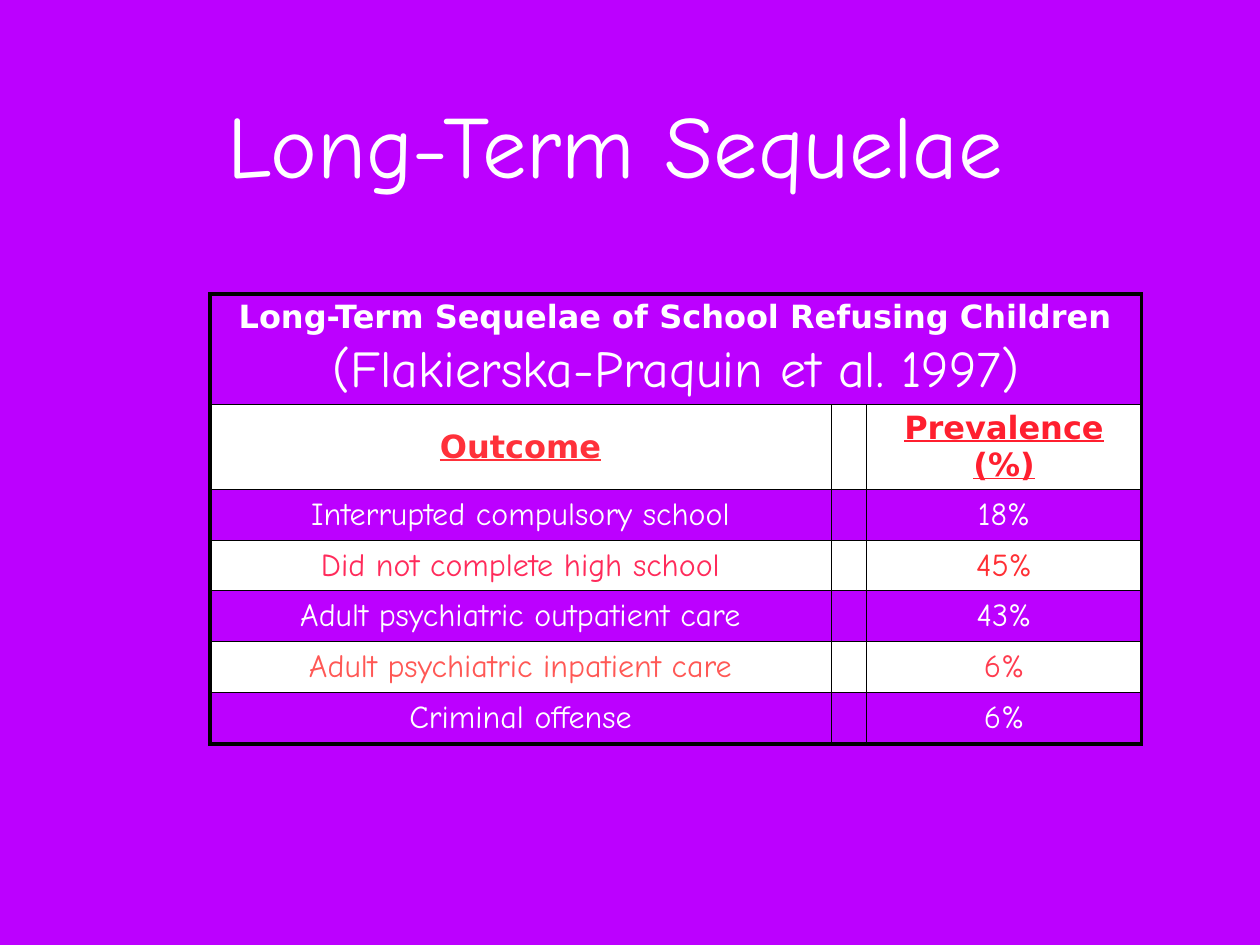
from dataclasses import dataclass

from pptx import Presentation
from pptx.dml.color import RGBColor
from pptx.enum.text import MSO_ANCHOR, MSO_AUTO_SIZE, PP_ALIGN
from pptx.oxml.ns import qn
from pptx.util import Cm, Pt
from lxml.etree import SubElement


@dataclass(frozen=True)
class Theme:
    background: str = "BC00FF"
    white: str = "FFFFFF"
    line: str = "000000"
    script_font: str = "Comic Neue"
    bold_font: str = "DejaVu Sans"
    title_size: int = 72
    citation_size: int = 42
    table_size: int = 26
    outer_line: int = 3
    inner_line: int = 1


@dataclass(frozen=True)
class Outcome:
    name: str
    prevalence: str
    name_color: str = "FFFFFF"
    prevalence_color: str = "FFFFFF"
    heading: bool = False


THEME = Theme()
OUTCOMES = [
    Outcome("Outcome", "Prevalence (%)", "FF313A", "FF1F2F", heading=True),
    Outcome("Interrupted compulsory school", "18%"),
    Outcome("Did not complete high school", "45%", "FF2B5B", "FF2F34"),
    Outcome("Adult psychiatric outpatient care", "43%"),
    Outcome("Adult psychiatric inpatient care", "6%", "FF5855", "FF3C4F"),
    Outcome("Criminal offense", "6%"),
]
COL_WIDTHS = [17.81, 1.02, 7.87]
ROW_HEIGHTS = [2.46, 2.44] + [1.45] * 4 + [1.49]


def write(p, text: str, size: int, color: str, heading: bool = False,
          underline: bool = False) -> None:
    p.text = text
    p.alignment = PP_ALIGN.CENTER
    font = p.runs[0].font
    font.name = THEME.bold_font if heading else THEME.script_font
    font.size = Pt(size)
    font.bold = heading
    font.underline = underline
    font.color.rgb = RGBColor.from_string(color)


def set_borders(cell, row: int, col: int, span: int = 1) -> None:
    """Thick lines on the table's outer edge, thin lines inside."""
    outer = {
        "a:lnL": col == 0,
        "a:lnR": col + span == len(COL_WIDTHS),
        "a:lnT": row == 0,
        "a:lnB": row + 1 == len(ROW_HEIGHTS),
    }
    tc_pr = cell._tc.get_or_add_tcPr()
    for tag, is_outer in outer.items():
        width = THEME.outer_line if is_outer else THEME.inner_line
        ln = SubElement(tc_pr, qn(tag), w=str(Pt(width)))
        fill = SubElement(ln, qn("a:solidFill"))
        SubElement(fill, qn("a:srgbClr"), val=THEME.line)


def format_cell(cell, row: int, col: int, span: int = 1) -> None:
    set_borders(cell, row, col, span)
    if row % 2:
        cell.fill.solid()
        cell.fill.fore_color.rgb = RGBColor.from_string(THEME.white)
    else:
        cell.fill.background()
    cell.vertical_anchor = MSO_ANCHOR.MIDDLE
    cell.margin_left = cell.margin_right = Cm(0.13)
    cell.margin_top = cell.margin_bottom = Cm(0.13)


def add_title(s) -> None:
    sp = s.shapes.title
    sp.left, sp.top, sp.width, sp.height = Cm(3.53), Cm(0.56), Cm(29.06), Cm(7.06)
    tf = sp.text_frame
    tf.word_wrap = True
    tf.auto_size = MSO_AUTO_SIZE.NONE
    tf.vertical_anchor = MSO_ANCHOR.MIDDLE
    tf.margin_left = tf.margin_right = tf.margin_top = tf.margin_bottom = Cm(0.15)
    write(tf.paragraphs[0], "Long-Term Sequelae ", THEME.title_size, THEME.white)


def add_outcome_table(s) -> None:
    table = s.shapes.add_table(
        len(ROW_HEIGHTS), len(COL_WIDTHS), Cm(6.02), Cm(8.43),
        Cm(sum(COL_WIDTHS)), Cm(sum(ROW_HEIGHTS))).table
    table.first_row = table.horz_banding = False
    for column, width in zip(table.columns, COL_WIDTHS):
        column.width = Cm(width)
    for row, height in zip(table.rows, ROW_HEIGHTS):
        row.height = Cm(height)

    # Caption across all columns
    caption = table.cell(0, 0)
    caption.merge(table.cell(0, len(COL_WIDTHS) - 1))
    format_cell(caption, 0, 0, len(COL_WIDTHS))
    tf = caption.text_frame
    write(tf.paragraphs[0], "Long-Term Sequelae of School Refusing Children",
          THEME.table_size, THEME.white, heading=True)
    p = tf.add_paragraph()
    write(p, "(Flakierska-Praquin et al. 1997)", THEME.citation_size, THEME.white)
    p.space_before = Pt(4)

    # Outcomes, with a narrow empty column between name and prevalence
    for i, outcome in enumerate(OUTCOMES, start=1):
        for j in range(len(COL_WIDTHS)):
            format_cell(table.cell(i, j), i, j)
        for j, text, color in ((0, outcome.name, outcome.name_color),
                               (2, outcome.prevalence, outcome.prevalence_color)):
            write(table.cell(i, j).text_frame.paragraphs[0], text,
                  THEME.table_size, color, outcome.heading, outcome.heading)


def main() -> None:
    prs = Presentation()
    prs.slide_width, prs.slide_height = Cm(36.12), Cm(27.1)
    s = prs.slides.add_slide(prs.slide_layouts[5])
    s.background.fill.solid()
    s.background.fill.fore_color.rgb = RGBColor.from_string(THEME.background)
    add_title(s)
    add_outcome_table(s)
    prs.save("out.pptx")


if __name__ == "__main__":
    main()
